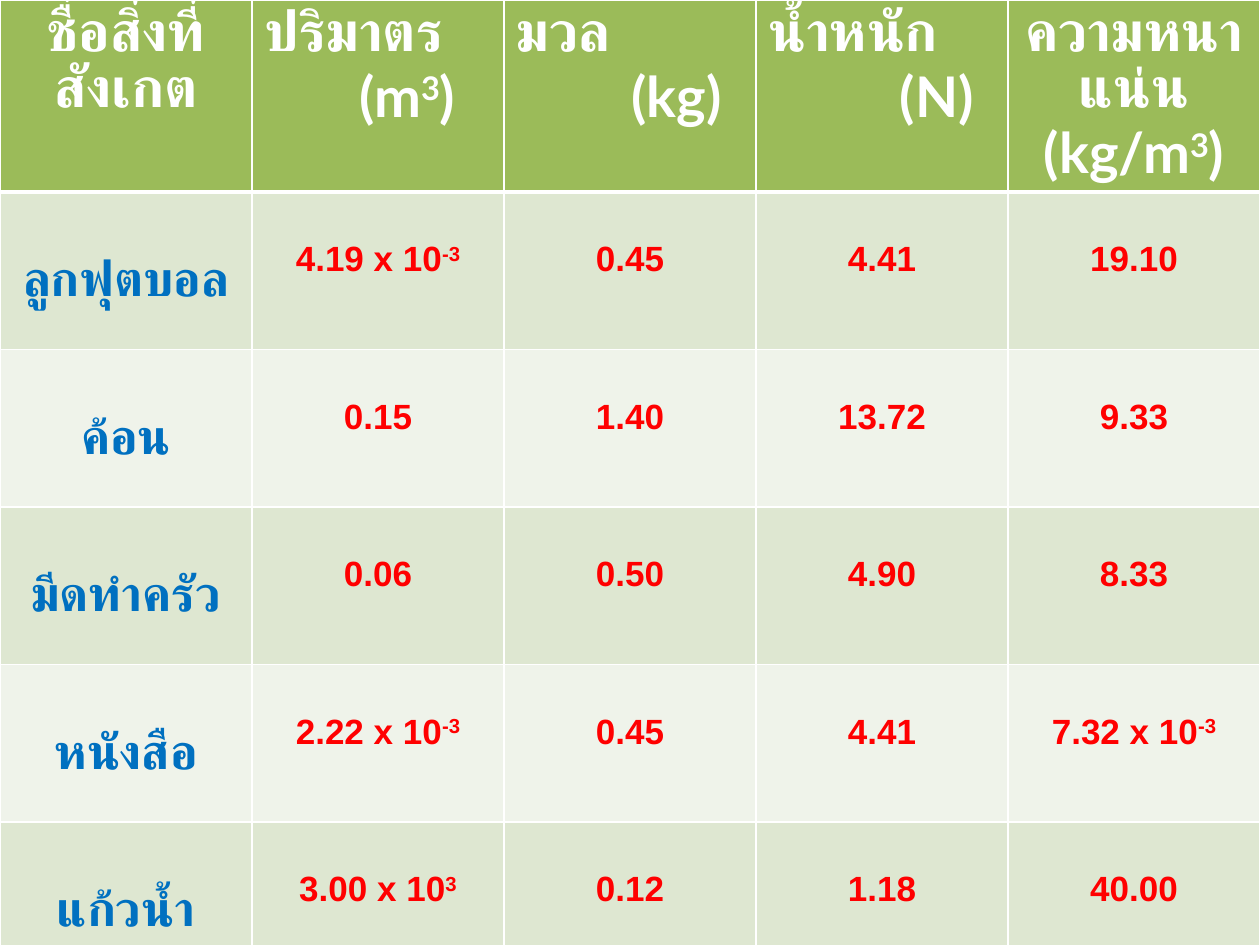
from dataclasses import dataclass

from lxml.etree import SubElement
from pptx import Presentation
from pptx.dml.color import RGBColor as RGB
from pptx.enum.text import PP_ALIGN as Align
from pptx.oxml.ns import qn
from pptx.util import Inches, Pt


@dataclass(frozen=True)
class Theme:
    head_font: str = "Lato"
    value_font: str = "Arial"
    head_size: int = 32
    name_size: int = 28
    value_size: int = 20
    white: str = "FFFFFF"
    green: str = "9BBB59"
    bands: tuple = ("DEE7D1", "EFF3EA")
    blue: str = "0070C0"
    red: str = "FF0000"
    thin: float = 1
    thick: float = 3


# Text between carets is superscript
# A two-line header holds its quantity, its unit and the unit's indent
HEADERS = [
    ("ชื่อสิ่งที่สังเกต",),
    ("ปริมาตร", "(m^3^)", 0.75),
    ("มวล", "(kg)", 0.91),
    ("น้ำหนัก", "(N)", 1.04),
    ("ความหนาแน่น (kg/m^3^)",),
]
ROWS = [
    ("ลูกฟุตบอล", "4.19 x 10^-3", "0.45", "4.41", "19.10"),
    ("ค้อน", "0.15", "1.40", "13.72", "9.33"),
    ("มีดทำครัว", "0.06", "0.50", "4.90", "8.33"),
    ("หนังสือ", "2.22 x 10^-3", "0.45", "4.41", "7.32 x 10^-3"),
    ("แก้วน้ำ", "3.00 x 10^3", "0.12", "1.18", "40.00"),
]


def write(p, text, *, font, size, color, align=Align.CENTER, indent=0):
    """Fill a paragraph with bold text, raising what stands between carets."""
    p.alignment = align
    if indent:
        p._p.get_or_add_pPr().set("marL", str(Inches(indent)))
    for i, part in enumerate(text.split("^")):
        if not part:
            continue
        r = p.add_run()
        r.text = part
        r.font.name, r.font.size, r.font.bold = font, Pt(size), True
        r.font.color.rgb = RGB.from_string(color)
        if i % 2:
            r.font._element.set("baseline", "30000")


class TableSlide:
    def __init__(self, prs, theme):
        self.theme = theme
        self.s = prs.slides.add_slide(prs.slide_layouts[6])

    def table(self, rows, cols, width, height):
        shape = self.s.shapes.add_table(
            rows, cols, 0, 0, Inches(width), Inches(height))
        return shape.table

    def cell(self, cell, fill, top=None, bottom=None, margin_top=0.05):
        """Set fill, upper margin and the four borders; return the text frame."""
        t = self.theme
        cell.margin_top = Inches(margin_top)
        tc_pr = cell._tc.get_or_add_tcPr()
        widths = {"a:lnL": t.thin, "a:lnR": t.thin,
                  "a:lnT": top or t.thin, "a:lnB": bottom or t.thin}
        for tag, width in widths.items():
            ln = SubElement(tc_pr, qn(tag), w=str(Pt(width)))
            SubElement(SubElement(ln, qn("a:solidFill")),
                       qn("a:srgbClr"), val=t.white)
        cell.fill.solid()
        cell.fill.fore_color.rgb = RGB.from_string(fill)
        return cell.text_frame

    def header(self, cell, title, unit=None, indent=0):
        t = self.theme
        style = dict(font=t.head_font, size=t.head_size, color=t.white)
        tf = self.cell(cell, t.green, bottom=t.thick)
        if unit is None:
            write(tf.paragraphs[0], title, **style)
        else:
            write(tf.paragraphs[0], title, align=Align.LEFT, **style)
            write(tf.add_paragraph(), unit, align=Align.LEFT,
                  indent=indent, **style)

    def body(self, cell, text, row, is_name):
        t = self.theme
        tf = self.cell(cell, t.bands[row % 2],
                       top=t.thick if row == 0 else t.thin,
                       margin_top=0.52 if is_name else 0.38)
        if is_name:
            style = dict(font=t.head_font, size=t.name_size, color=t.blue)
        else:
            style = dict(font=t.value_font, size=t.value_size, color=t.red)
        write(tf.paragraphs[0], text, **style)


def main():
    prs = Presentation()
    prs.slide_width, prs.slide_height = Inches(10), Inches(7.5)
    slide = TableSlide(prs, Theme())

    # Table over the whole slide
    table = slide.table(len(ROWS) + 1, len(HEADERS), 10, 7.5)

    # Header row
    for c, header in enumerate(HEADERS):
        slide.header(table.cell(0, c), *header)

    # Measurements
    for r, row in enumerate(ROWS):
        for c, text in enumerate(row):
            slide.body(table.cell(r + 1, c), text, r, is_name=c == 0)

    prs.save("out.pptx")


if __name__ == "__main__":
    main()
